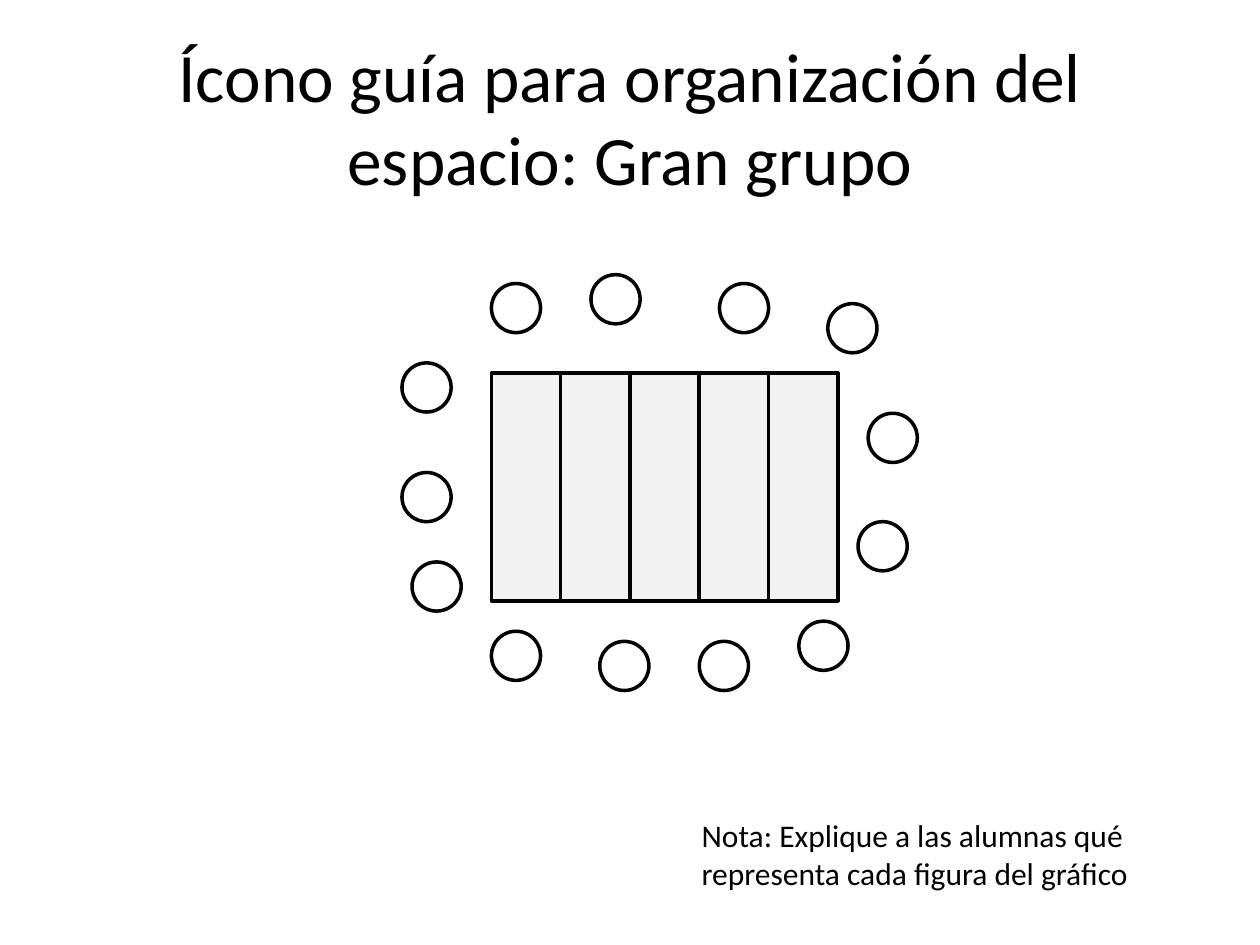
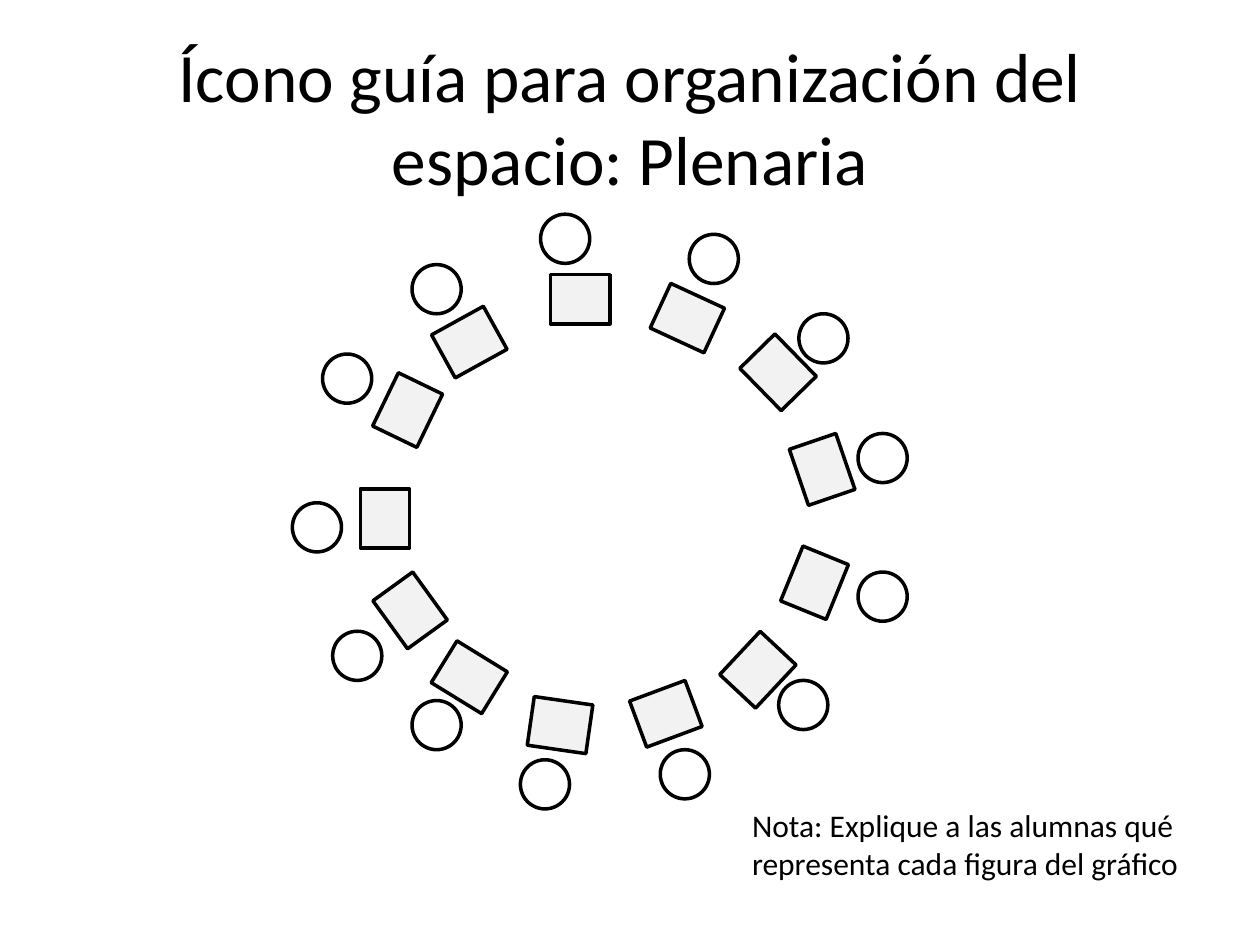
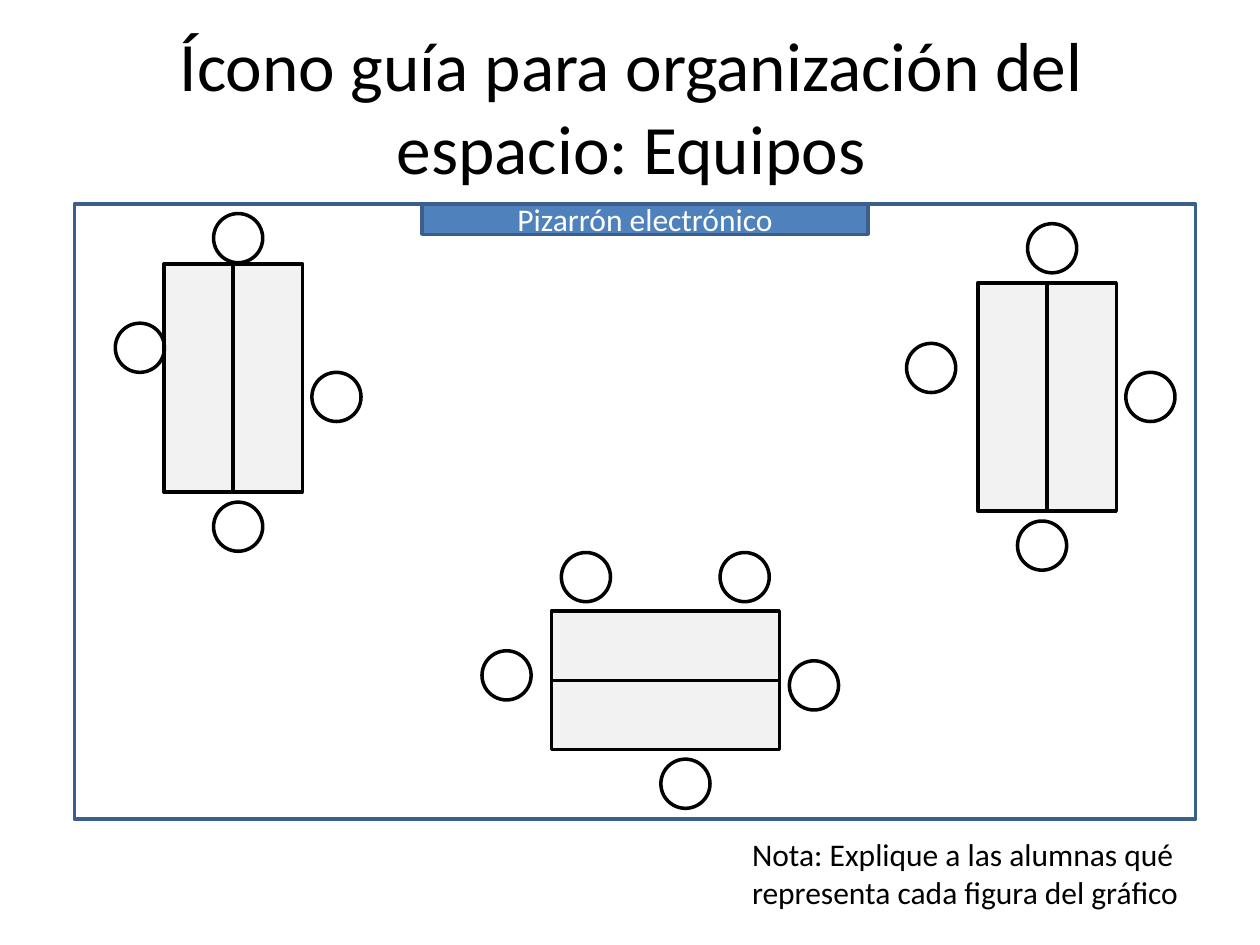
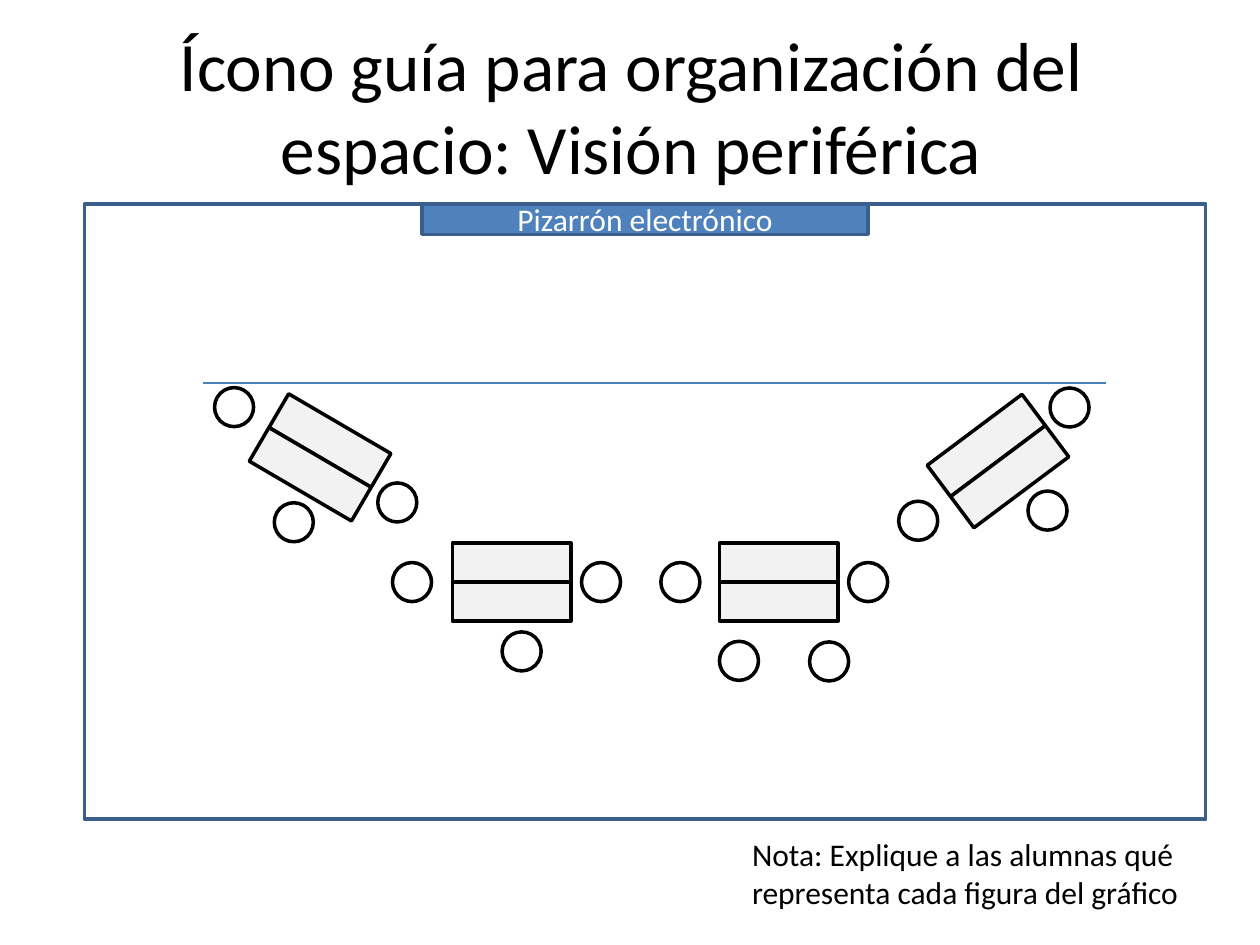
import math

import pptx
import pptx.dml.color
import pptx.enum.shapes
import pptx.enum.text
import pptx.oxml
import pptx.oxml.ns
import pptx.util

Inches = pptx.util.Inches
Pt = pptx.util.Pt
RGBColor = pptx.dml.color.RGBColor
Align = pptx.enum.text.PP_ALIGN
Anchor = pptx.enum.text.MSO_ANCHOR
AutoSize = pptx.enum.text.MSO_AUTO_SIZE
ShapeType = pptx.enum.shapes.MSO_SHAPE

BLACK = RGBColor(0x00, 0x00, 0x00)
WHITE = RGBColor(0xFF, 0xFF, 0xFF)
DESK_GRAY = RGBColor(0xF2, 0xF2, 0xF2)
BOARD_BLUE = RGBColor(0x4F, 0x81, 0xBD)
WALL_BLUE = RGBColor(0x3A, 0x5F, 0x8C)
SIGHT_BLUE = RGBColor(0x4B, 0x7E, 0xBC)

FONT = "Calibri"
TITLE = "Ícono guía para organización del espacio: "
NOTE = "Nota: Explique a las alumnas qué representa cada figura del gráfico"
BOARD = "Pizarrón electrónico"

CHAIR = 0.39
SMALL_CHAIR = 0.31
LONG_DESK = (0.55, 1.81)
SMALL_DESK = (0.31, 0.94)
SINGLE_DESK = (0.47, 0.39)

GROUP_CHAIRS = [
    (0.71, 0.07), (0.08, 2.28), (0, 0.7), (3.62, 1.96), (3.7, 1.1),
    (1.5, 0), (0.71, 2.83), (1.57, 2.91), (2.52, 0.07), (2.36, 2.91),
    (3.15, 2.75), (3.38, 0.23), (0, 1.57),
]

PLENARY_SEATS = [
    ((2.05, 0.48), 0, (1.97, 0)),
    ((2.9, 0.63), 24.8, (3.15, 0.16)),
    ((3.62, 1.06), 45.6, (4.02, 0.79)),
    ((3.97, 1.83), 251.1, (4.49, 1.74)),
    ((3.91, 2.73), 292.2, (4.49, 2.84)),
    ((3.46, 3.42), 313.1, (3.86, 3.7)),
    ((2.73, 3.77), 339.6, (2.92, 4.25)),
    ((1.89, 3.86), 8.2, (1.81, 4.33)),
    ((1.17, 3.48), 31.6, (0.95, 3.86)),
    ((0.7, 2.95), 54.1, (0.32, 3.31)),
    ((0.5, 2.22), 90, (0, 2.29)),
    ((0.68, 1.36), 115.8, (0.24, 1.11)),
    ((1.17, 0.82), 331.1, (0.95, 0.4)),
]

TEAMS = [
    ((1.85, 3), 0, [(-0.74, -0.24), (0.04, 1.18), (0.04, -1.11), (0.82, 0.15)]),
    ((8.31, 3.15), 0, [(0.82, 0), (-0.04, 1.18), (0.04, -1.18), (-0.92, -0.23)]),
    ((5.28, 5.4), 90, [(0.82, -0.16), (-0.04, 1.26), (-0.82, -0.63),
                       (0.04, -1.18), (-0.82, 0.63)]),
]

ARC_CHAIRS = [(0.55, -0.08), (0, -0.71), (0, 0.79)]
ARC_TEAMS = [
    ((7.92, 3.66), 53.2, ARC_CHAIRS),
    ((2.54, 3.63), 120.3, ARC_CHAIRS),
    ((4.06, 4.62), 90, ARC_CHAIRS),
    ((6.18, 4.62), 90, [(0.63, -0.4), (0, -0.71), (0, 0.78)]),
]


def format_text(text_frame, size, color, alignment):
    text_frame.word_wrap = True
    for paragraph in text_frame.paragraphs:
        paragraph.alignment = alignment
        for run in paragraph.runs:
            run.font.name = FONT
            run.font.size = Pt(size)
            run.font.color.rgb = color


def add_figure(shapes, kind, left, top, width, height, fill, line, angle=0):
    shape = shapes.add_shape(
        kind, Inches(left), Inches(top), Inches(width), Inches(height))
    shape.shadow.inherit = False
    shape.rotation = angle
    if fill is None:
        shape.fill.background()
    else:
        shape.fill.solid()
        shape.fill.fore_color.rgb = fill
    shape.line.color.rgb = line
    shape.line.width = Pt(2)
    return shape


def add_desk(shapes, left, top, size, angle=0):
    add_figure(shapes, ShapeType.RECTANGLE, left, top, *size, DESK_GRAY, BLACK, angle)


def add_chair(shapes, left, top, size=CHAIR):
    add_figure(shapes, ShapeType.OVAL, left, top, size, size, None, BLACK)


def add_team(shapes, center, angle, chairs, desk_size, chair_size):
    cosine, sine = math.cos(math.radians(angle)), math.sin(math.radians(angle))

    def corner(across, along, width, height):
        return (center[0] + across * cosine - along * sine - width / 2,
                center[1] + across * sine + along * cosine - height / 2)

    for side in (-1, 1):
        left, top = corner(side * desk_size[0] / 2, 0, *desk_size)
        add_desk(shapes, left, top, desk_size, angle)
    for across, along in chairs:
        left, top = corner(across, along, chair_size, chair_size)
        add_chair(shapes, left, top, chair_size)


def add_room(slide, left, top):
    add_figure(slide.shapes, ShapeType.RECTANGLE, left, top, 8.9, 4.88, None, WALL_BLUE)


def add_board(slide, left, top):
    board = add_figure(slide.shapes, ShapeType.RECTANGLE, left, top, 3.54, 0.24,
                       BOARD_BLUE, WALL_BLUE)
    board.text_frame.text = BOARD
    board.text_frame.vertical_anchor = Anchor.MIDDLE
    format_text(board.text_frame, 18, WHITE, Align.CENTER)


def add_sight_line(slide, left, top, width):
    line = slide.shapes.add_connector(
        pptx.enum.shapes.MSO_CONNECTOR.STRAIGHT,
        Inches(left), Inches(top), Inches(left + width), Inches(top))
    line.line.color.rgb = SIGHT_BLUE
    line.line.width = Pt(0.75)
    line._element.spPr.append(pptx.oxml.parse_xml(
        "<a:effectLst %s/>" % pptx.oxml.ns.nsdecls("a")))


def add_note(slide, left, top):
    note = slide.shapes.add_textbox(Inches(left), Inches(top), Inches(3.62), Inches(0.71))
    note.text_frame.text = NOTE
    note.text_frame.auto_size = AutoSize.SHAPE_TO_FIT_TEXT
    format_text(note.text_frame, 18, BLACK, Align.LEFT)


def add_slide(presentation, topic, title_corner, note_corner):
    slide = presentation.slides.add_slide(presentation.slide_layouts[5])
    title = slide.shapes.title
    title.left, title.top = (Inches(length) for length in title_corner)
    title.width, title.height = Inches(9), Inches(1.25)
    title.text_frame.text = TITLE + topic
    title.text_frame.auto_size = AutoSize.NONE
    title.text_frame.vertical_anchor = Anchor.MIDDLE
    format_text(title.text_frame, 39.6, BLACK, Align.CENTER)
    add_note(slide, *note_corner)
    return slide


def draw_large_group(slide, left, top):
    shapes = slide.shapes.add_group_shape().shapes
    for index in range(5):
        add_desk(shapes, left + 0.71 + index * LONG_DESK[0], top + 0.78, LONG_DESK)
    for chair_left, chair_top in GROUP_CHAIRS:
        add_chair(shapes, left + chair_left, top + chair_top)


def draw_plenary(slide, left, top):
    shapes = slide.shapes.add_group_shape().shapes
    for desk, angle, chair in PLENARY_SEATS:
        add_desk(shapes, left + desk[0], top + desk[1], SINGLE_DESK, angle)
        add_chair(shapes, left + chair[0], top + chair[1])


def draw_teams(slide):
    add_room(slide, 0.59, 1.62)
    for center, angle, chairs in TEAMS:
        add_team(slide.shapes, center, angle, chairs, LONG_DESK, CHAIR)
    add_board(slide, 3.35, 1.62)


def draw_peripheral_vision(slide):
    add_room(slide, 0.67, 1.62)
    add_board(slide, 3.35, 1.62)
    for center, angle, chairs in ARC_TEAMS:
        shapes = slide.shapes.add_group_shape().shapes
        add_team(shapes, center, angle, chairs, SMALL_DESK, SMALL_CHAIR)
    add_chair(slide.shapes, 5.71, 5.09, SMALL_CHAIR)
    add_sight_line(slide, 1.61, 3.04, 7.17)


def main():
    presentation = pptx.Presentation()
    presentation.slide_width = Inches(10)
    presentation.slide_height = Inches(7.5)

    draw_large_group(
        add_slide(presentation, "Gran grupo", (0.5, 0.3), (5.47, 6.43)), 3.19, 2.18)
    draw_plenary(
        add_slide(presentation, "Plenaria", (0.5, 0.3), (5.87, 6.35)), 2.32, 1.7)
    draw_teams(
        add_slide(presentation, "Equipos", (0.51, 0.21), (5.87, 6.58)))
    draw_peripheral_vision(
        add_slide(presentation, "Visión periférica", (0.51, 0.21), (5.87, 6.58)))

    presentation.save("out.pptx")


if __name__ == "__main__":
    main()
